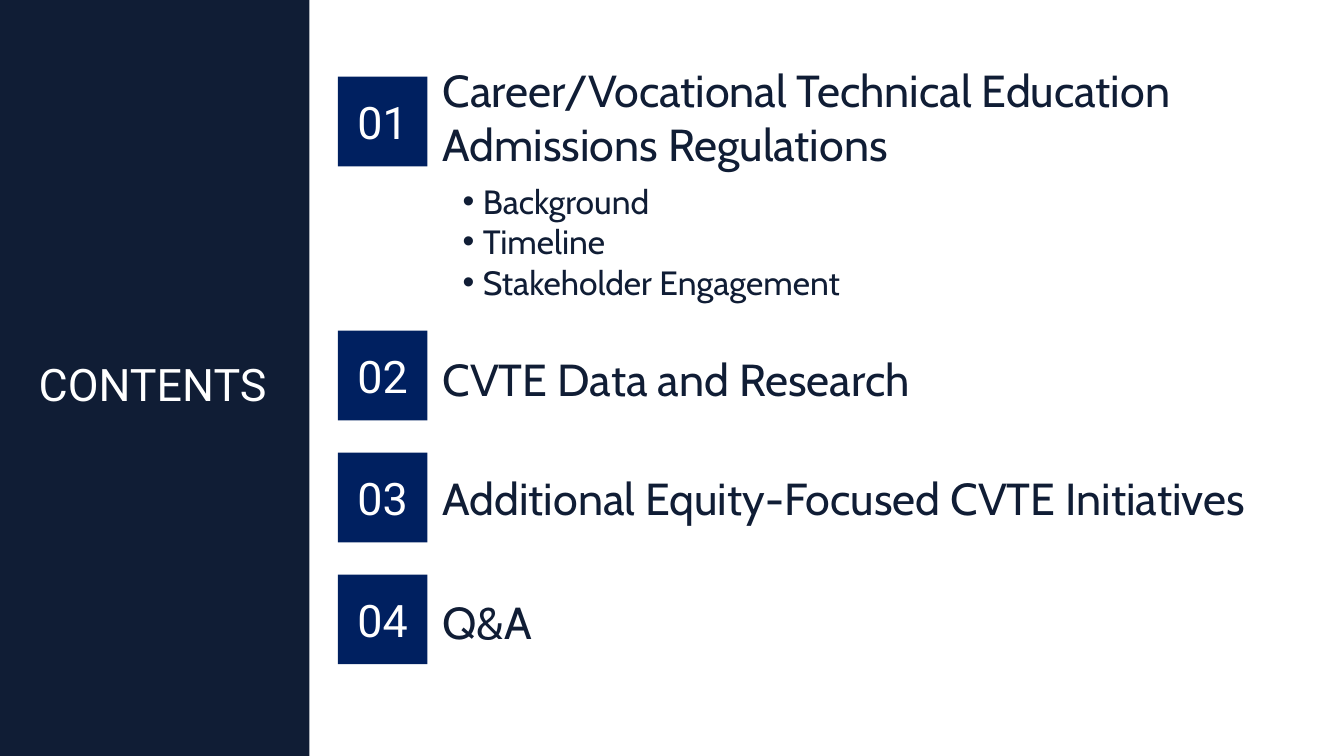
from dataclasses import dataclass

from lxml import etree
from pptx import Presentation
from pptx.dml.color import RGBColor
from pptx.enum.shapes import MSO_SHAPE
from pptx.enum.text import MSO_ANCHOR, PP_ALIGN
from pptx.oxml.ns import qn
from pptx.util import Inches, Pt

RECTANGLE = MSO_SHAPE.RECTANGLE
MIDDLE = MSO_ANCHOR.MIDDLE
CENTER, LEFT = PP_ALIGN.CENTER, PP_ALIGN.LEFT


@dataclass(frozen=True)
class Theme:
    """Colours, fonts and type sizes of the slide."""
    navy: RGBColor = RGBColor(0x10, 0x1D, 0x35)
    blue: RGBColor = RGBColor(0x00, 0x20, 0x60)
    white: RGBColor = RGBColor(0xFF, 0xFF, 0xFF)
    label_font: str = "Roboto"
    topic_font: str = "Cabin"
    large: Pt = Pt(32)
    small: Pt = Pt(24)
    gap: Pt = Pt(7.3)


THEME = Theme()
LABEL = {"name": THEME.label_font, "size": THEME.large}
TOPIC = {"name": THEME.topic_font, "size": THEME.large}
DETAIL = {"name": THEME.topic_font, "size": THEME.small}

BADGE_SIZE = 0.89
TOPIC_OFFSET = 0.94
AGENDA = [
    {"top": 0.76, "topic": "Career/Vocational Technical Education Admissions Regulations",
     "box": (0, 8.74, 2.1), "details": ["Background", "Timeline", "Stakeholder Engagement"]},
    {"top": 3.28, "topic": "CVTE Data and Research", "box": (0.03, 8.73, 0.89)},
    {"top": 4.49, "topic": "Additional Equity-Focused CVTE Initiatives", "box": (0, 8.84, 0.89)},
    {"top": 5.7, "topic": "Q&A", "box": (0.05, 8.73, 0.83)},
]


def write_paragraph(paragraph, text, font_values, color, alignment=LEFT):
    """Write one formatted run into a paragraph."""
    paragraph.alignment = alignment
    run = paragraph.add_run()
    run.text = text
    for name, value in font_values.items():
        setattr(run.font, name, value)
    run.font.color.rgb = color


def add_bullet(paragraph):
    """Give a paragraph a hanging bullet."""
    properties = paragraph._p.get_or_add_pPr()
    properties.set("marL", str(Inches(0.4)))
    properties.set("indent", str(Inches(-0.2)))
    etree.SubElement(properties, qn("a:buFont")).set("typeface", "Arial")
    etree.SubElement(properties, qn("a:buChar")).set("char", "•")


def add_rectangle(shapes, left, top, width, height, color):
    """Add a flat rectangle without an outline."""
    shape = shapes.add_shape(RECTANGLE, Inches(left), Inches(top), Inches(width), Inches(height))
    shape.shadow.inherit = False
    shape.fill.solid()
    shape.fill.fore_color.rgb = color
    shape.line.fill.background()
    return shape


def add_text_frame(shapes, left, top, width, height):
    """Add a wrapping, vertically centred text box and return its frame."""
    box = shapes.add_textbox(Inches(left), Inches(top), Inches(width), Inches(height))
    box.text_frame.word_wrap = True
    box.text_frame.vertical_anchor = MIDDLE
    return box.text_frame


def add_sidebar(slide, left, top, width, height):
    """Draw the dark side panel with its heading."""
    add_rectangle(slide.shapes, left, top, width, height, THEME.navy)
    heading = add_text_frame(slide.shapes, left, top + 3.49, width - 0.04, 0.64)
    write_paragraph(heading.paragraphs[0], "CONTENTS", LABEL, THEME.white, CENTER)


def add_agenda_item(slide, left, number, item):
    """Draw a numbered badge and its topic as one group."""
    shapes = slide.shapes.add_group_shape().shapes
    top = item["top"]
    badge = add_rectangle(shapes, left, top, BADGE_SIZE, BADGE_SIZE, THEME.blue)
    badge.text_frame.vertical_anchor = MIDDLE
    write_paragraph(badge.text_frame.paragraphs[0], f"{number:02}", LABEL, THEME.white, CENTER)
    shift, width, height = item["box"]
    frame = add_text_frame(shapes, left + TOPIC_OFFSET, top + shift, width, height)
    write_paragraph(frame.paragraphs[0], item["topic"], TOPIC, THEME.navy)
    for index, detail in enumerate(item.get("details", [])):
        paragraph = frame.add_paragraph()
        if index == 0:
            paragraph.space_before = THEME.gap
        write_paragraph(paragraph, detail, DETAIL, THEME.navy)
        add_bullet(paragraph)


def main():
    """Build and save the contents slide."""
    presentation = Presentation()
    presentation.slide_width = Inches(13.33)
    presentation.slide_height = Inches(7.5)
    slide = presentation.slides.add_slide(presentation.slide_layouts[6])
    add_sidebar(slide, 0, 0, 3.07, 7.5)
    for number, item in enumerate(AGENDA, start=1):
        add_agenda_item(slide, 3.35, number, item)
    presentation.save("out.pptx")


if __name__ == "__main__":
    main()
